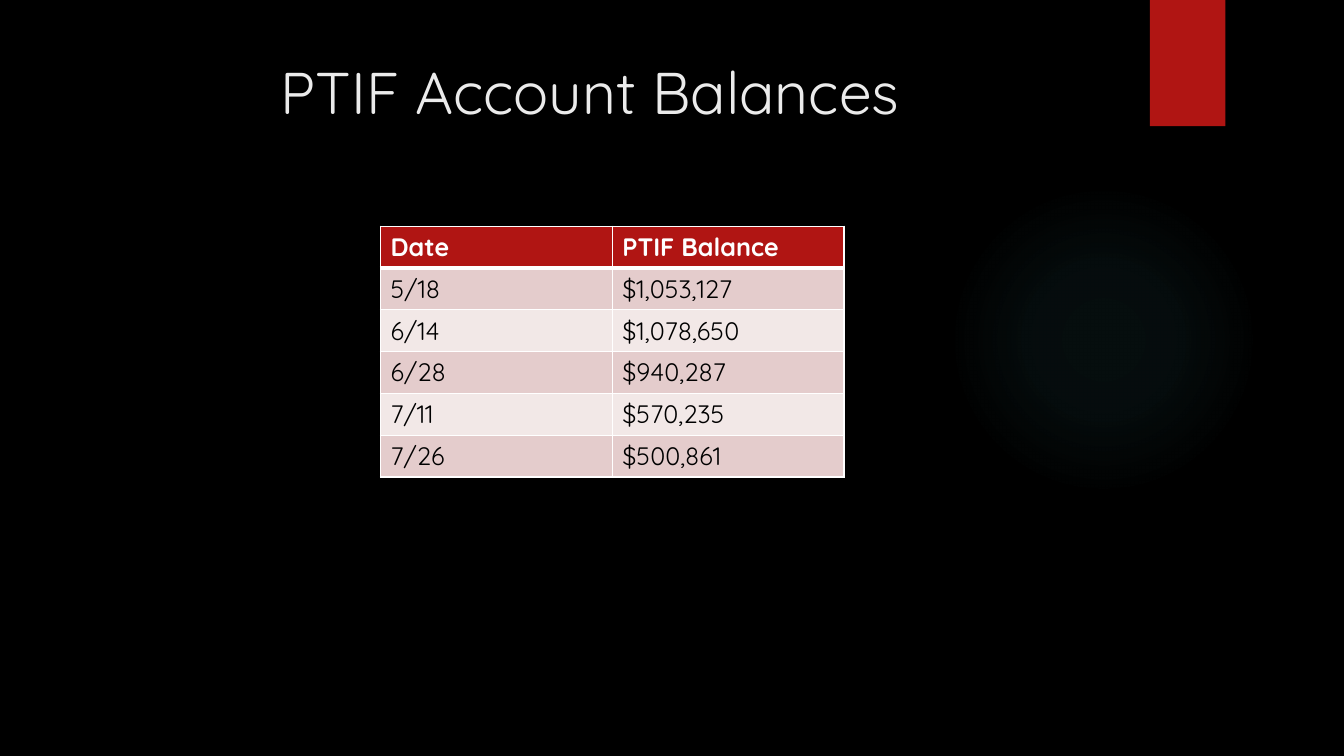
from pptx import Presentation
from pptx.dml.color import RGBColor as Rgb
from pptx.enum.shapes import MSO_SHAPE as Form
from pptx.enum.text import MSO_ANCHOR as Anchor, PP_ALIGN as Align
from pptx.oxml import parse_xml
from pptx.oxml.ns import nsdecls
from pptx.util import Cm, Pt

BLACK = Rgb(0x00, 0x00, 0x00)
WHITE = Rgb(0xFF, 0xFF, 0xFF)
PALE = Rgb(0xEB, 0xEB, 0xEB)
RED = Rgb(0xB0, 0x15, 0x13)
ROSE = Rgb(0xE4, 0xCC, 0xCC)
BLUSH = Rgb(0xF2, 0xE8, 0xE7)
TEAL = Rgb(0x50, 0xB9, 0xC1)

ROWS = [
    ("Date", "PTIF Balance"),
    ("5/18", "$1,053,127"),
    ("6/14", "$1,078,650"),
    ("6/28", "$940,287"),
    ("7/11", "$570,235"),
    ("7/26", "$500,861"),
]


class Deck:
    face = "Quicksand"

    def __init__(self):
        self.show = Presentation()
        self.show.slide_width = Cm(33.87)
        self.show.slide_height = Cm(19.05)
        self.slide = self.show.slides.add_slide(self.show.slide_layouts[5])
        back = self.slide.background.fill
        back.solid()
        back.fore_color.rgb = BLACK

    def label(self, frame, text, size, color, bold=False):
        run = frame.paragraphs[0].add_run()
        run.text = text
        font = run.font
        font.name, font.size, font.bold = self.face, Pt(size), bold
        font.color.rgb = color

    def shape(self, form, left, top, wide, high, color):
        item = self.slide.shapes.add_shape(
            form, Cm(left), Cm(top), Cm(wide), Cm(high))
        item.shadow.inherit = False
        item.fill.solid()
        item.fill.fore_color.rgb = color
        item.line.fill.background()
        return item

    def glow(self, left, top, size, color, stops):
        item = self.shape(Form.OVAL, left, top, size, size, color)
        marks = "".join(
            f'<a:gs pos="{spot * 1000}"><a:srgbClr val="{color}">'
            f'<a:alpha val="{alpha * 1000}"/></a:srgbClr></a:gs>'
            for spot, alpha in stops)
        grad = parse_xml(
            f'<a:gradFill {nsdecls("a")} rotWithShape="1"><a:gsLst>{marks}</a:gsLst>'
            '<a:path path="circle"><a:fillToRect l="50000" t="50000" '
            'r="50000" b="50000"/></a:path></a:gradFill>')
        props = item._element.spPr
        props.replace(props.find("{*}solidFill"), grad)

    def title(self, text, left, top, wide, high):
        head = self.slide.shapes.title
        head.left, head.top = Cm(left), Cm(top)
        head.width, head.height = Cm(wide), Cm(high)
        frame = head.text_frame
        frame.word_wrap = True
        frame.vertical_anchor = Anchor.TOP
        frame.paragraphs[0].alignment = Align.CENTER
        self.label(frame, text, 42, PALE)
        self.slide.shapes._spTree.append(head._element)

    def edge(self, cell, side, width):
        cell._tc.get_or_add_tcPr().append(parse_xml(
            f'<a:ln{side} {nsdecls("a")} w="{Pt(width)}"><a:solidFill>'
            f'<a:srgbClr val="{WHITE}"/></a:solidFill></a:ln{side}>'))

    def table(self, rows, left, top, wide, high):
        grid = self.slide.shapes.add_table(
            len(rows), len(rows[0]), Cm(left), Cm(top), Cm(wide), Cm(high)).table
        grid.first_row = grid.horz_banding = False
        for r, row in enumerate(rows):
            for c, text in enumerate(row):
                cell = grid.cell(r, c)
                for side in "LRTB":
                    thick = (r, side) in ((0, "B"), (1, "T"))
                    self.edge(cell, side, 3 if thick else 1)
                cell.fill.solid()
                cell.fill.fore_color.rgb = (
                    RED if r == 0 else ROSE if r % 2 else BLUSH)
                self.label(cell.text_frame, text, 18,
                           BLACK if r else WHITE, r == 0)


def main():
    deck = Deck()
    deck.glow(23.9, 4.65, 7.82, TEAL, [(0, 7), (36, 6), (69, 0)])
    deck.shape(Form.RECTANGLE, 28.98, 0, 1.9, 3.18, RED)
    deck.title("PTIF Account Balances", 1.8, 1.27, 26.14, 3.89)
    deck.table(ROWS, 9.59, 5.7, 11.68, 6.32)
    deck.show.save("out.pptx")


if __name__ == "__main__":
    main()
